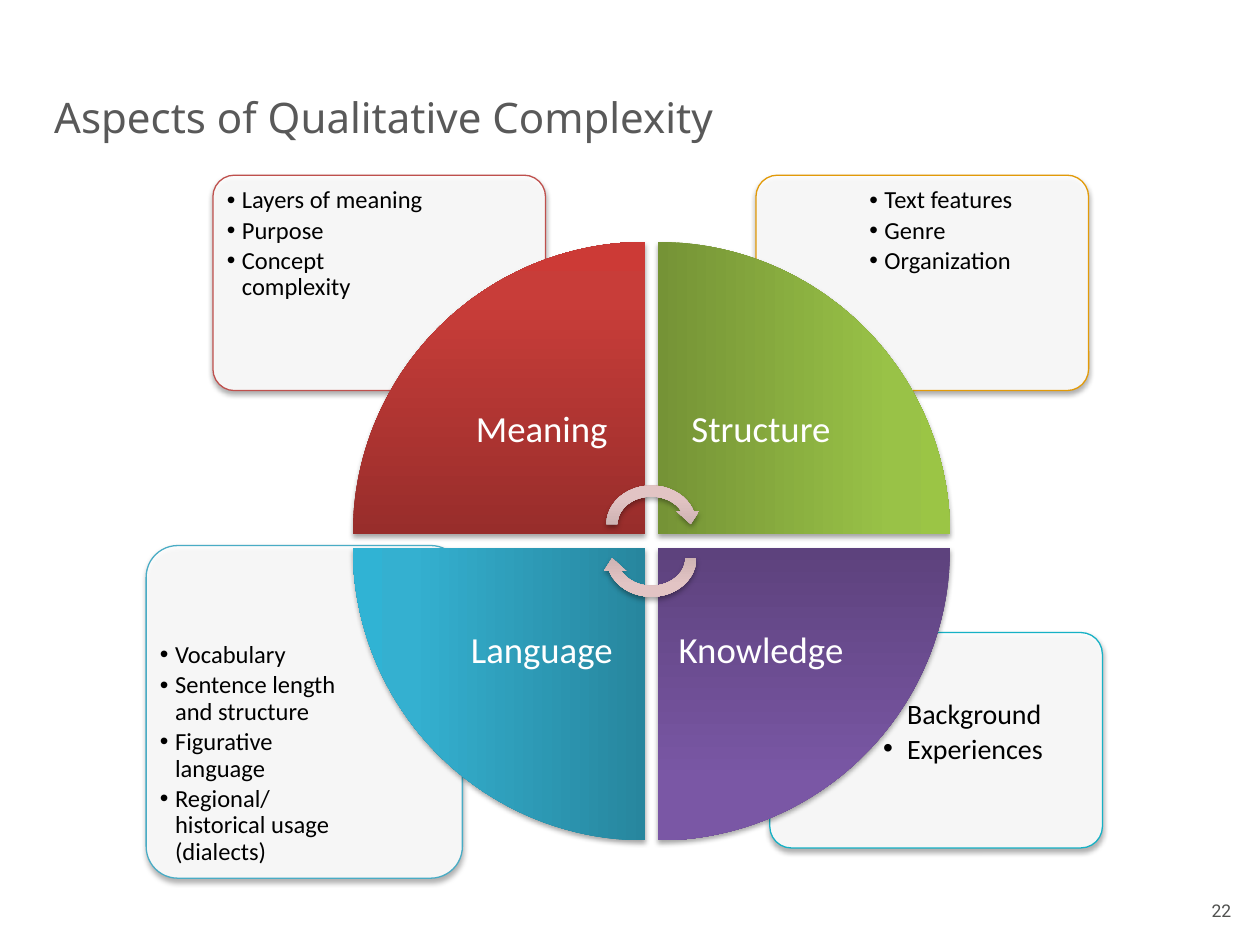
from copy import deepcopy

from lxml import etree
from pptx import Presentation
from pptx.dml.color import RGBColor
from pptx.enum.shapes import MSO_SHAPE as Shape
from pptx.enum.text import MSO_ANCHOR as Anchor, PP_ALIGN as Align
from pptx.oxml import parse_xml
from pptx.oxml.ns import nsdecls, qn
from pptx.util import Inches, Pt

COLORS = {
    "title": "595959", "number": "50514F", "text": "000000", "label": "FFFFFF",
    "card": "FFFFFF", "red": "BF504D", "orange": "E29A08", "blue": "49ACC5", "teal": "16B1C5",
}
GRADIENTS = {
    "Meaning": ("982D2B", "C83D39", "CC3A36"),
    "Structure": ("759336", "99C247", "9BC545"),
    "Knowledge": ("5D427D", "7A57A5", "7A56A7"),
    "Language": ("27869E", "34B0D0", "30B3D4"),
    "arrow": ("AC9595", "E2C4C4", "E4C4C4"),
}
STOPS = (0, 0.8, 1)
WEDGE, LABEL = 2.32, 1.64
LEFT, TOP, RIGHT, BOTTOM = 2.8, 1.92, 5.22, 4.35

# Card box, border, text box, inset, hanging indent, text size, bullets
CARDS = [
    ((6.11, 5.02, 2.64, 1.71), "teal", (6.94, 5.49, 1.77, 1.21), 0.07, 0.19, 16,
     ["Background", "Experiences"]),
    ((1.16, 4.33, 2.51, 2.64), "blue", (1.21, 5.04, 1.66, 1.87), 0.06, 0.12, 14,
     ["Vocabulary", "Sentence length and structure", "Figurative language",
      "Regional/historical usage (dialects)"]),
    ((6, 1.39, 2.64, 1.71), "orange", (6.83, 1.42, 1.77, 1.21), 0.07, 0.12, 14,
     ["Text features", "Genre", "Organization"]),
    ((1.69, 1.39, 2.64, 1.71), "red", (1.73, 1.42, 1.77, 1.21), 0.07, 0.12, 14,
     ["Layers of meaning", "Purpose", "Concept complexity"]),
]
# Label, wedge corner, rotation, label corner
WEDGES = [
    ("Meaning", (LEFT, TOP), 0, (3.48, 2.6)),
    ("Structure", (RIGHT, TOP), 90, (RIGHT, 2.6)),
    ("Knowledge", (RIGHT, BOTTOM), 180, (RIGHT, BOTTOM)),
    ("Language", (LEFT, BOTTOM), 270, (3.48, BOTTOM)),
]


def rgb(name):
    return RGBColor.from_string(COLORS[name])


class SlideBuilder:
    def __init__(self, deck):
        self.page = deck.slides.add_slide(deck.slide_layouts[5])

    def add_span(self, para, words, size, font, color):
        span = para.add_run()
        span.text = words
        span.font.size = Pt(size)
        span.font.name = font
        span.font.color.rgb = rgb(color)

    def set_frame(self, frame, inset_x, inset_y, anchor):
        frame.word_wrap = True
        frame.vertical_anchor = anchor
        frame.margin_left = frame.margin_right = Inches(inset_x)
        frame.margin_top = frame.margin_bottom = Inches(inset_y)

    def title(self, words, box):
        title = self.page.shapes.title
        title.left, title.top, title.width, title.height = map(Inches, box)
        self.set_frame(title.text_frame, 0.1, 0.1, Anchor.MIDDLE)
        para = title.text_frame.paragraphs[0]
        para.alignment = Align.LEFT
        self.add_span(para, words, 24, "Noto Sans", "title")

    def text_box(self, box, inset_x, inset_y, anchor=Anchor.TOP):
        frame = self.page.shapes.add_textbox(*map(Inches, box)).text_frame
        self.set_frame(frame, inset_x, inset_y, anchor)
        return frame

    def page_number(self, number, box):
        para = self.text_box(box, 0.1, 0.05).paragraphs[0]
        para.alignment = Align.RIGHT
        self.add_span(para, number, 10, "Roboto", "number")

    def bullets(self, items, box, inset, indent, size):
        frame = self.text_box(box, inset, inset)
        for index, item in enumerate(items):
            para = frame.add_paragraph() if index else frame.paragraphs[0]
            props = para._p.get_or_add_pPr()
            props.set("marL", str(Inches(indent)))
            props.set("indent", str(-Inches(indent)))
            etree.SubElement(props, qn("a:buFont")).set("typeface", "Arial")
            etree.SubElement(props, qn("a:buChar")).set("char", "•")
            para.level = 1
            para.line_spacing = 0.9
            para.space_before = Pt(size * 0.15 if index else 0)
            self.add_span(para, item, size, "Calibri", "text")

    def label(self, words, box):
        para = self.text_box(box, 0.16, 0.16, Anchor.MIDDLE).paragraphs[0]
        para.alignment = Align.CENTER
        para.line_spacing = 0.9
        self.add_span(para, words, 21, "Calibri", "label")

    def add_shadow(self, shape):
        shape._element.spPr.append(parse_xml(
            f'<a:effectLst {nsdecls("a")}>'
            f'<a:outerShdw blurRad="{Pt(3.1)}" dist="{Pt(1.8)}" dir="5400000" rotWithShape="0">'
            '<a:srgbClr val="000000"><a:alpha val="34000"/></a:srgbClr>'
            '</a:outerShdw></a:effectLst>'))

    def card(self, box, border):
        card = self.page.shapes.add_shape(Shape.ROUNDED_RECTANGLE, *map(Inches, box))
        card.adjustments[0] = 0.1
        card.fill.solid()
        card.fill.fore_color.rgb = rgb("card")
        color = card._element.spPr.find(".//" + qn("a:srgbClr"))
        etree.SubElement(color, qn("a:alpha")).set("val", "89000")
        card.line.color.rgb = rgb(border)
        card.line.width = Pt(0.75)
        self.add_shadow(card)

    def gradient_shape(self, kind, box, rotation, gradient):
        shape = self.page.shapes.add_shape(kind, *map(Inches, box))
        shape.rotation = rotation
        shape.fill.gradient()
        shape.fill.gradient_angle = 90
        stop_list = shape._element.spPr.find(".//" + qn("a:gsLst"))
        stop_list.append(deepcopy(stop_list[0]))
        for stop, position, color in zip(shape.fill.gradient_stops, STOPS, GRADIENTS[gradient]):
            stop.position = position
            stop.color.rgb = RGBColor.from_string(color)
        shape.line.fill.background()
        self.add_shadow(shape)


def main():
    deck = Presentation()
    deck.slide_width, deck.slide_height = Inches(10), Inches(7.5)
    slide = SlideBuilder(deck)
    slide.page_number("22", (8.28, 7.09, 1.59, 0.27))
    slide.title("Aspects of Qualitative Complexity", (0.33, 0.3, 9.38, 1.25))
    for card_box, border, text_box, inset, indent, size, items in CARDS:
        slide.card(card_box, border)
        slide.bullets(items, text_box, inset, indent, size)
    for name, corner, rotation, label_corner in WEDGES:
        slide.gradient_shape(Shape.PIE_WEDGE, (*corner, WEDGE, WEDGE), rotation, name)
        slide.label(name, (*label_corner, LABEL, LABEL))
    for top, rotation in ((3.81, 0), (4.08, 180)):
        slide.gradient_shape(Shape.CIRCULAR_ARROW, (4.77, top, 0.8, 0.7), rotation, "arrow")
    deck.save("out.pptx")


if __name__ == "__main__":
    main()
